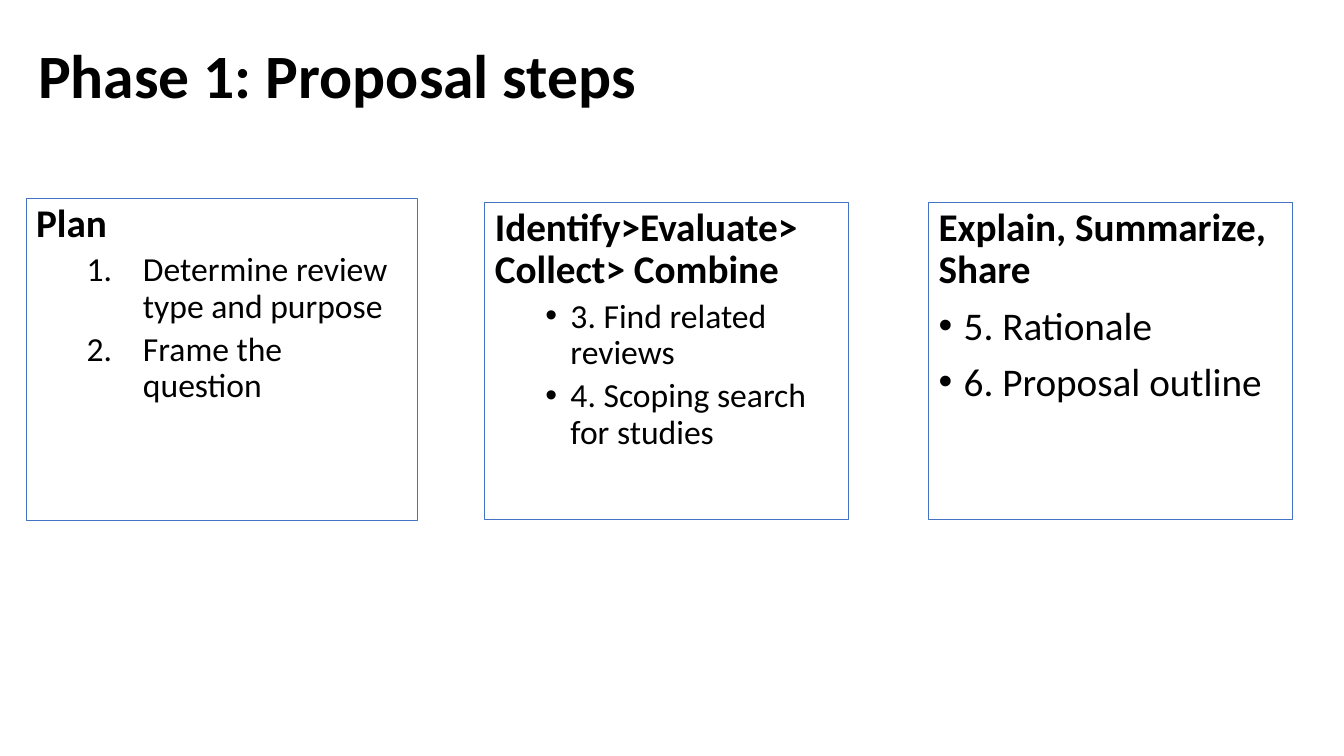
from lxml import etree
from pptx import Presentation
from pptx.dml.color import RGBColor
from pptx.enum.shapes import MSO_SHAPE as Shape
from pptx.enum.text import MSO_ANCHOR as Anchor, PP_ALIGN as Align
from pptx.oxml.ns import qn
from pptx.util import Inches, Pt

FONT = "Calibri"
BLACK = "000000"
BLUE = "4472C4"


def color(value):
    return RGBColor.from_string(value)


def write_text(paragraph, text, size=28, bold=False, before=10,
               indent=0, hanging=0, bullet=None, level=0):
    """Fill a paragraph; a bullet is a tag name with its attributes."""
    paragraph.text = text
    paragraph.alignment = Align.LEFT
    paragraph.level = level
    paragraph.line_spacing = 0.9
    paragraph.space_before = Pt(before)
    for run in paragraph.runs:
        run.font.name = FONT
        run.font.size = Pt(size)
        run.font.bold = bold
        run.font.color.rgb = color(BLACK)
    if bullet:
        properties = paragraph._p.get_or_add_pPr()
        properties.set("marL", str(Inches(indent)))
        properties.set("indent", str(-Inches(hanging)))
        tag, attributes = bullet
        bullet_font = etree.SubElement(properties, qn("a:buFont"))
        bullet_font.set("typeface", "Arial" if tag == "a:buChar" else "+mj-lt")
        etree.SubElement(properties, qn(tag), attributes)


def add_title(slide, text):
    box = slide.shapes.add_textbox(Inches(0.28), Inches(0.18), Inches(6.18), Inches(1.2))
    frame = box.text_frame
    frame.word_wrap = True
    frame.vertical_anchor = Anchor.MIDDLE
    write_text(frame.paragraphs[0], text, size=44, bold=True, before=0)


def add_step_box(slide, position, heading, steps, step_format):
    box = slide.shapes.add_shape(Shape.RECTANGLE, *map(Inches, position))
    box.shadow.inherit = False
    box.fill.background()
    box.line.color.rgb = color(BLUE)
    box.line.width = Pt(0.75)
    frame = box.text_frame
    frame.word_wrap = True
    frame.vertical_anchor = Anchor.TOP
    write_text(frame.paragraphs[0], heading, bold=True)
    for step in steps:
        write_text(frame.add_paragraph(), step, **step_format)


def main():
    presentation = Presentation()
    presentation.slide_width = Inches(13.33)
    presentation.slide_height = Inches(7.5)
    slide = presentation.slides.add_slide(presentation.slide_layouts[6])

    add_title(slide, "Phase 1: Proposal steps")

    # List styles
    number = ("a:buAutoNum", {"type": "arabicPeriod"})
    dot = ("a:buChar", {"char": "•"})
    second_level = dict(size=24, before=5, level=1)
    numbered = dict(second_level, indent=1.06, hanging=0.56, bullet=number)
    dotted = dict(second_level, indent=0.75, hanging=0.25, bullet=dot)
    large_dotted = dict(indent=0.25, hanging=0.25, bullet=dot)

    # Step boxes
    add_step_box(slide, (0.26, 1.97, 3.88, 3.19), "Plan",
                 ["Determine review type and purpose", "Frame the question"], numbered)
    add_step_box(slide, (4.81, 2.01, 3.61, 3.14), "Identify>Evaluate>\nCollect> Combine",
                 ["3. Find related reviews", "4. Scoping search for studies"], dotted)
    add_step_box(slide, (9.21, 2.01, 3.61, 3.14), "Explain, Summarize, Share",
                 ["5. Rationale", "6. Proposal outline"], large_dotted)

    presentation.save("out.pptx")


if __name__ == "__main__":
    main()
